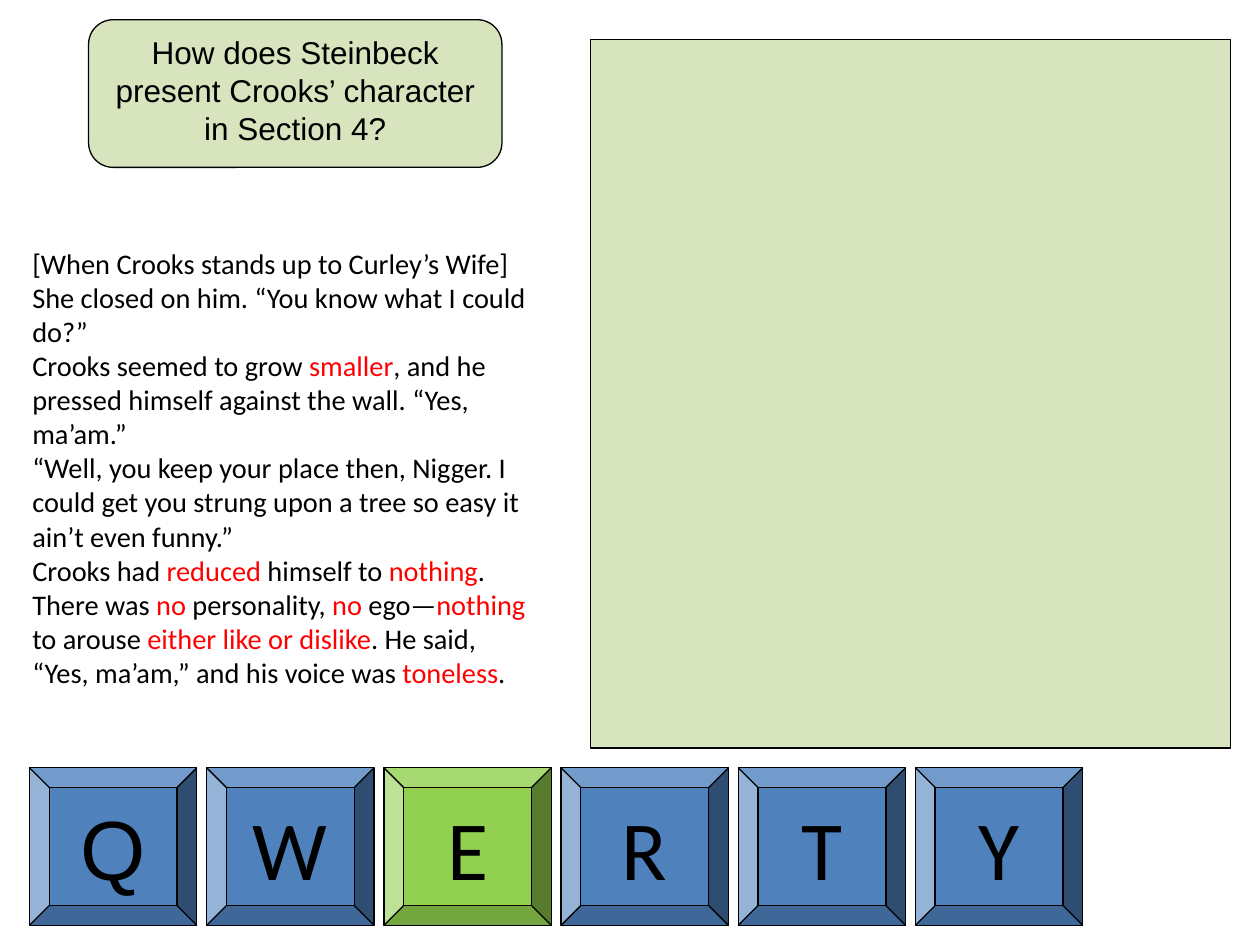
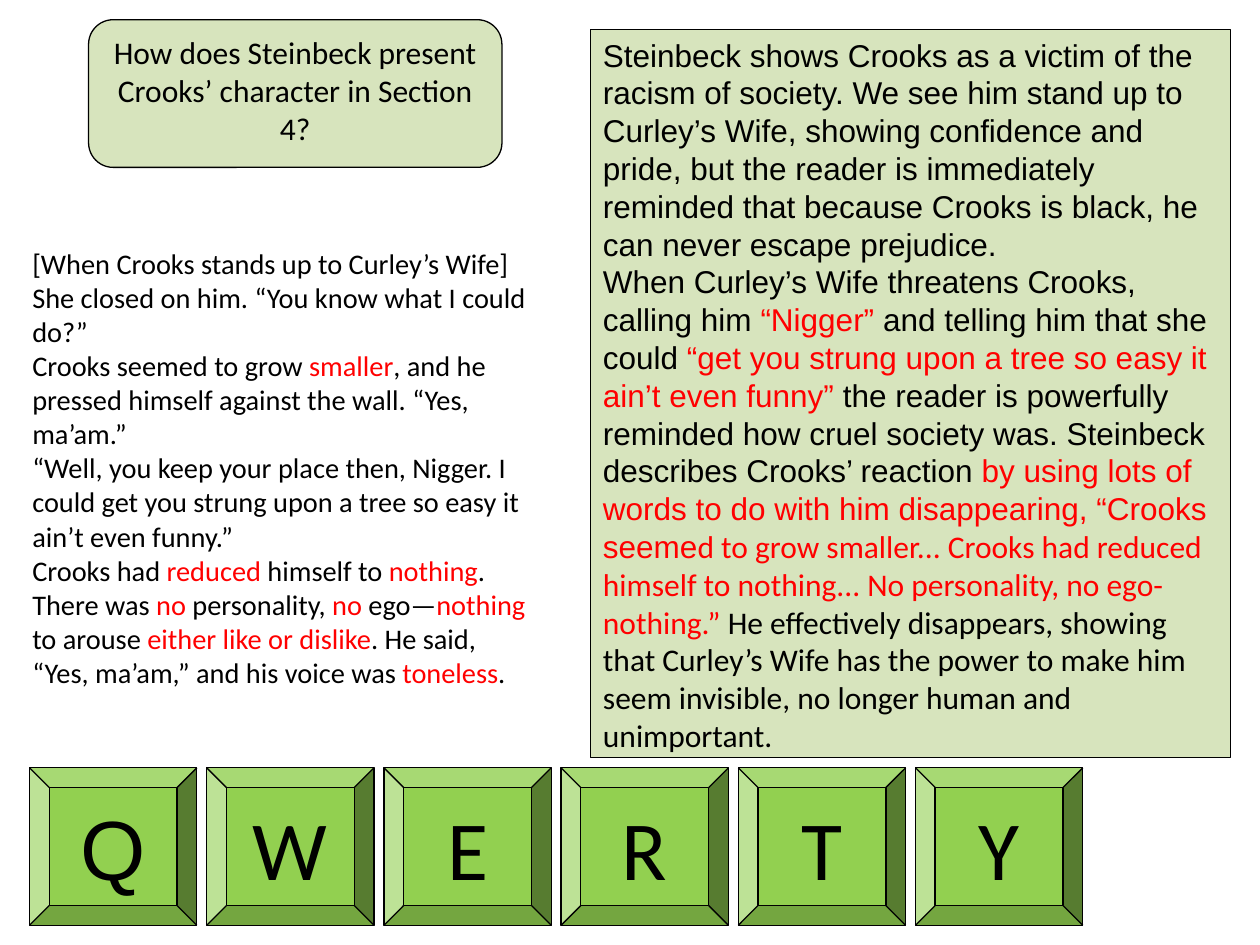
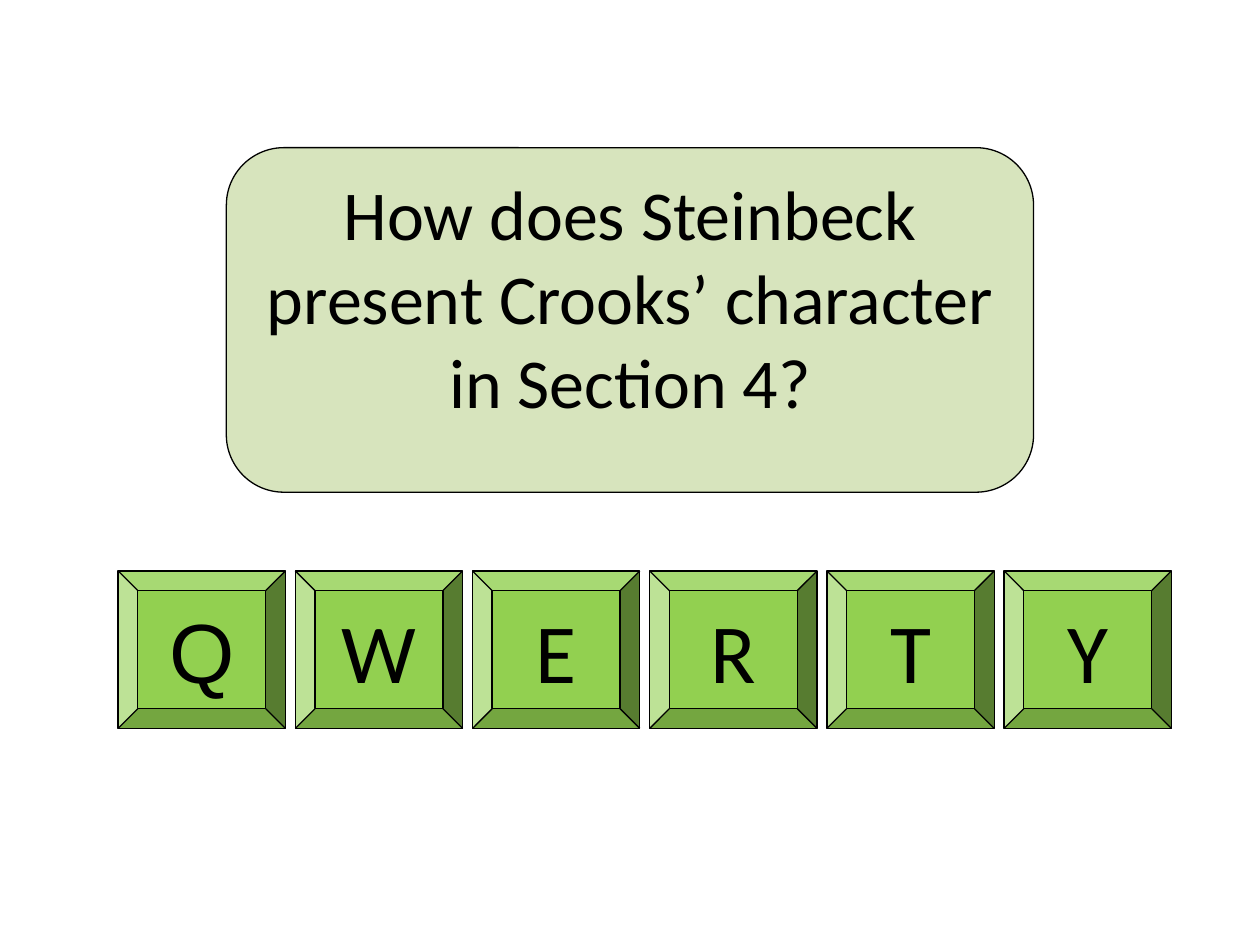
from dataclasses import dataclass
from typing import NamedTuple

from lxml.etree import SubElement
from pptx import Presentation
from pptx.dml.color import RGBColor
from pptx.enum.shapes import MSO_SHAPE as Shape
from pptx.enum.text import MSO_ANCHOR as Anchor, MSO_AUTO_SIZE as AutoSize, PP_ALIGN as Align
from pptx.oxml.ns import qn
from pptx.util import Emu, Pt

PX_PER_INCH = 128
COLOURS = {
    "ink": "000000",
    "highlight": "FF0000",
    "panel": "D7E4BD",
    "key": "4F81BD",
    "key_done": "92D050",
}
LETTERS = "QWERTY"
KEY_WIDTH, KEY_HEIGHT, KEY_GAP = 170, 160, 10
QUESTION = "How does Steinbeck present Crooks’ character in Section 4?"


class Box(NamedTuple):
    left: int
    top: int
    width: int
    height: int


class Span(NamedTuple):
    text: str
    colour: str = "ink"
    font: str = "Calibri"


@dataclass(frozen=True)
class Card:
    box: Box
    paragraphs: tuple[tuple[Span, ...], ...] = ()
    size: float = 18
    kind: Shape = Shape.ROUNDED_RECTANGLE
    fill: str = "panel"
    align: Align = Align.CENTER
    anchor: Anchor = Anchor.TOP


PASSAGE_BOX = Box(20, 290, 540, 370)
PASSAGE = (
    Span(
        "[When Crooks stands up to Curley’s Wife]\n"
        "She closed on him. “You know what I could do?”\n"
        "Crooks seemed to grow "
    ),
    Span("smaller", "highlight"),
    Span(
        ", and he pressed himself against the wall. “Yes, ma’am.”\n"
        "“Well, you keep your place then, Nigger. I could get you strung upon "
        "a tree so easy it ain’t even funny.”\n"
        "Crooks had "
    ),
    Span("reduced", "highlight"),
    Span(" himself to "),
    Span("nothing", "highlight"),
    Span(". There was "),
    Span("no", "highlight"),
    Span(" personality, "),
    Span("no", "highlight"),
    Span(" ego—"),
    Span("nothing", "highlight"),
    Span(" to arouse "),
    Span("either like or dislike", "highlight"),
    Span(". He said, “Yes, ma’am,” and his voice was "),
    Span("toneless", "highlight"),
    Span("."),
)
ANSWER = (
    (
        Span(
            "Steinbeck shows Crooks as a victim of the racism of society. We see him "
            "stand up to Curley’s Wife, showing confidence and pride, but the reader is "
            "immediately reminded that because Crooks is black, he can never escape "
            "prejudice.",
            font="Arial",
        ),
    ),
    (
        Span("When Curley’s Wife threatens Crooks, calling him ", font="Arial"),
        Span("“Nigger” ", "highlight", "Arial"),
        Span("and telling him that she could ", font="Arial"),
        Span("“get you strung upon a tree so easy it ain’t even funny” ", "highlight", "Arial"),
        Span(
            "the reader is powerfully reminded how cruel society was. Steinbeck "
            "describes Crooks’ reaction ",
            font="Arial",
        ),
        Span(
            "by using lots of words to do with him disappearing, “Crooks seeme",
            "highlight",
            "Arial",
        ),
        Span(
            "d to grow smaller... Crooks had reduced himself to nothing... "
            "No personality, no ego- nothing.”",
            "highlight",
        ),
        Span(
            " He effectively disappears, showing that Curley’s Wife has the power to "
            "make him seem invisible, no longer human and unimportant."
        ),
    ),
)


def px(length: int) -> Emu:
    return Emu(length * 914400 // PX_PER_INCH)


def colour(name: str) -> RGBColor:
    return RGBColor.from_string(COLOURS[name])


def write_spans(para, spans: tuple[Span, ...], size: float, align: Align) -> None:
    para.alignment = align
    for span in spans:
        for index, line in enumerate(span.text.split("\n")):
            if index:
                para.add_line_break()
            run = para.add_run()
            run.text = line
            run.font.size = Pt(size)
            run.font.name = span.font
            run.font.color.rgb = colour(span.colour)
    for line_break in para._p.findall(qn("a:br")):
        SubElement(line_break, qn("a:rPr"), sz=str(round(size * 100)))


def draw_card(page, card: Card) -> None:
    shape = page.shapes.add_shape(card.kind, *map(px, card.box))
    shape.shadow.inherit = False
    shape.fill.solid()
    shape.fill.fore_color.rgb = colour(card.fill)
    shape.line.color.rgb = colour("ink")
    shape.line.width = Pt(0.75)
    frame = shape.text_frame
    frame.word_wrap = True
    frame.vertical_anchor = card.anchor
    for index, spans in enumerate(card.paragraphs):
        para = frame.add_paragraph() if index else frame.paragraphs[0]
        write_spans(para, spans, card.size, card.align)


def draw_keys(page, left: int, top: int, done: str) -> None:
    for index, letter in enumerate(LETTERS):
        key_left = left + index * (KEY_WIDTH + KEY_GAP)
        font = "Arial" if letter == "Q" else "Calibri"
        draw_card(page, Card(
            box=Box(key_left, top, KEY_WIDTH, KEY_HEIGHT),
            paragraphs=((Span(letter, font=font),),),
            size=48,
            kind=Shape.BEVEL,
            fill="key_done" if letter in done else "key",
            anchor=Anchor.MIDDLE,
        ))


def draw_question(page, box: Box, size: float, font: str = "Calibri") -> None:
    draw_card(page, Card(box, ((Span(QUESTION, font=font),),), size))


def draw_passage(page) -> None:
    title = page.shapes.title
    title.left, title.top, title.width, title.height = map(px, PASSAGE_BOX)
    frame = title.text_frame
    frame.word_wrap = True
    frame.auto_size = AutoSize.NONE
    frame.vertical_anchor = Anchor.MIDDLE
    write_spans(frame.paragraphs[0], PASSAGE, 16.2, Align.LEFT)


def add_passage_page(deck, done: str, panel_box: Box, answer: tuple, question_font: str) -> None:
    page = deck.slides.add_slide(deck.slide_layouts.get_by_name("Title Slide"))
    subtitle = page.placeholders[1].element
    subtitle.getparent().remove(subtitle)
    draw_passage(page)
    draw_keys(page, 30, 780, done)
    draw_card(page, Card(panel_box, answer, kind=Shape.RECTANGLE, align=Align.LEFT))
    draw_question(page, Box(90, 20, 420, 150), 18, question_font)


def add_question_page(deck) -> None:
    page = deck.slides.add_slide(deck.slide_layouts.get_by_name("Blank"))
    draw_question(page, Box(230, 150, 820, 350), 40)
    draw_keys(page, 120, 580, LETTERS)


def main() -> None:
    deck = Presentation()
    deck.slide_width, deck.slide_height = px(1280), px(960)
    add_passage_page(deck, "E", Box(600, 40, 650, 720), (), "Arial")
    add_passage_page(deck, LETTERS, Box(600, 30, 650, 740), ANSWER, "Calibri")
    add_question_page(deck)
    deck.save("out.pptx")


if __name__ == "__main__":
    main()
